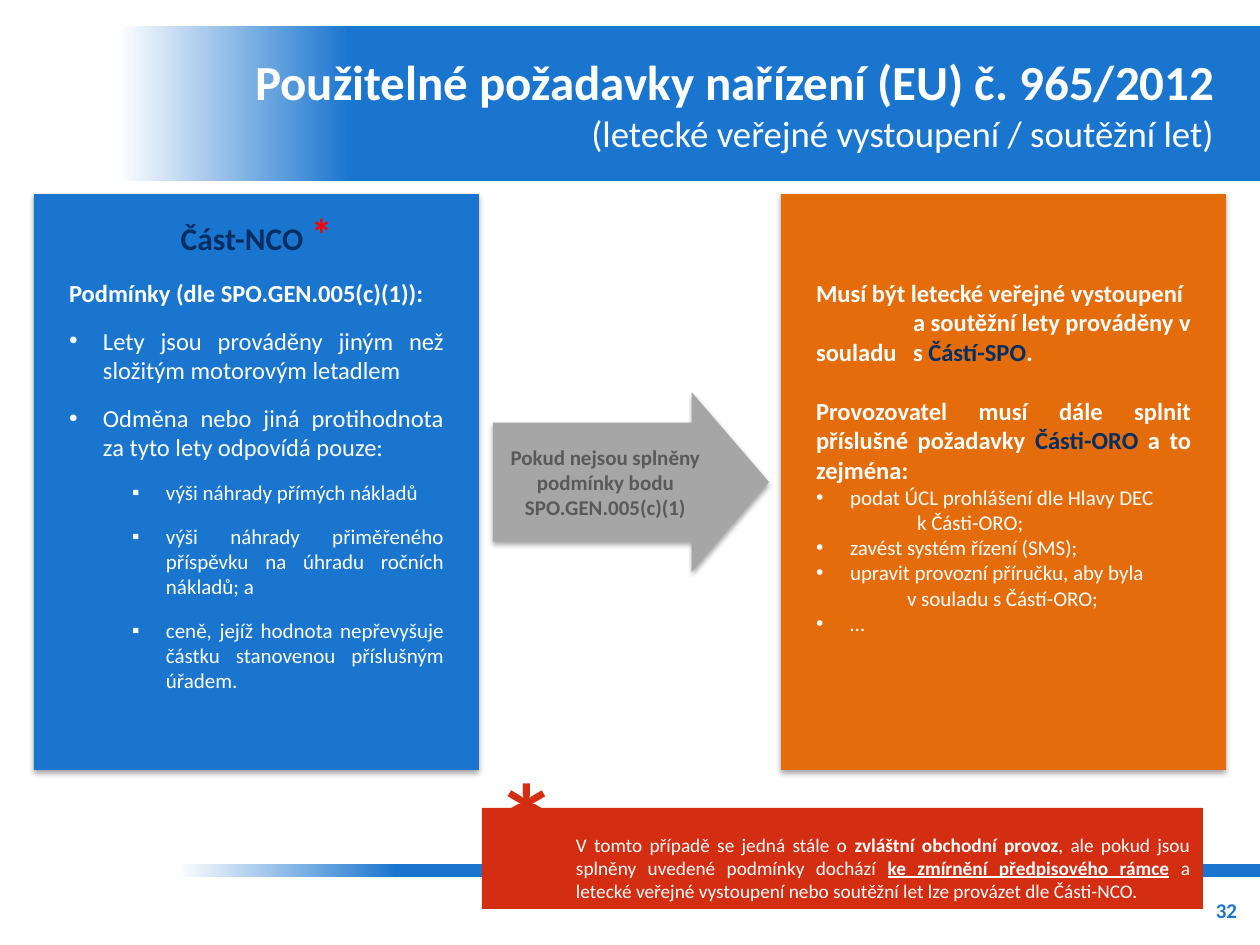
import pptx
import pptx.dml.color
import pptx.enum.shapes
import pptx.enum.text
import pptx.oxml
import pptx.oxml.ns
import pptx.util

RGBColor = pptx.dml.color.RGBColor
Align = pptx.enum.text.PP_ALIGN
Anchor = pptx.enum.text.MSO_ANCHOR
Shape = pptx.enum.shapes.MSO_SHAPE

WHITE = RGBColor(0xFF, 0xFF, 0xFF)
BLUE = RGBColor(0x1A, 0x75, 0xCF)
NAVY = RGBColor(0x00, 0x2E, 0x63)
ORANGE = RGBColor(0xE4, 0x6C, 0x0A)
GREY = RGBColor(0xA6, 0xA6, 0xA6)
DARK_GREY = RGBColor(0x59, 0x59, 0x59)
RED = RGBColor(0xD4, 0x2E, 0x12)
BRIGHT_RED = RGBColor(0xFF, 0x00, 0x00)
FONT = "Calibri"
EMU_PER_PX = 914400 / 126
HANG = 34  # hanging indent of every bullet

# A run is (text, size, colour, style); style holds b for bold, u for underline.
# A paragraph is (alignment, runs, options).
TITLE = [(Align.RIGHT, [
    ("Použitelné požadavky nařízení (EU) č. 965/2012\n", 28, WHITE, "b"),
    ("(letecké veřejné vystoupení / soutěžní let)", 21, WHITE, "")], {})]
NUMBER = [(Align.RIGHT, [("32", 12, BLUE, "b")], {})]
ARROW = [(Align.CENTER, [
    ("Pokud nejsou splněny podmínky bodu SPO.GEN.005(c)(1)", 12, DARK_GREY, "b")], {})]
ASTERISK = [(Align.LEFT, [("*", 70, RED, "b")], {})]
NOTE = [(Align.JUSTIFY, [
    ("V tomto případě se jedná stále o ", 11, WHITE, ""),
    ("zvláštní obchodní provoz", 11, WHITE, "b"),
    (", ale pokud jsou splněny uvedené podmínky dochází ", 11, WHITE, ""),
    ("ke zmírnění předpisového rámce", 11, WHITE, "bu"),
    (" a letecké veřejné vystoupení nebo soutěžní let lze provázet dle Části-NCO.",
     11, WHITE, "")], {})]

CONDITIONS = [
    "Lety jsou prováděny jiným než složitým motorovým letadlem",
    "Odměna nebo jiná protihodnota za tyto lety odpovídá pouze:",
]
PAYMENTS = [
    "výši náhrady přímých nákladů",
    "výši náhrady přiměřeného příspěvku na úhradu ročních nákladů; a",
    "ceně, jejíž hodnota nepřevyšuje částku stanovenou příslušným úřadem.",
]
DUTIES = [  # text and tab stops
    ("podat ÚCL prohlášení dle Hlavy DEC\n\tk Části-ORO;", [101]),
    ("zavést systém řízení (SMS);", []),
    ("upravit provozní příručku, aby byla\n\tv souladu s Částí-ORO;", [91]),
    ("…", []),
]

NCO = [
    (Align.CENTER, [("Část-NCO ", 18, NAVY, "b"), ("*", 25, BRIGHT_RED, "b")], {}),
    (Align.JUSTIFY, [("Podmínky (dle SPO.GEN.005(c)(1)):", 14, WHITE, "b")],
     {"before": 10.5}),
]
NCO += [(Align.JUSTIFY, [(text, 14, WHITE, "")],
         {"before": 10.5, "bullet": "•", "margin": HANG}) for text in CONDITIONS]
NCO += [(Align.JUSTIFY, [(text, 12, WHITE, "")],
         {"before": 10.5, "bullet": "▪", "margin": 97, "level": 1}) for text in PAYMENTS]

SPO = [
    (Align.LEFT, [
        ("Musí být letecké veřejné vystoupení\n\ta soutěžní lety prováděny v\n"
         "souladu\ts ", 14, WHITE, "b"),
        ("Částí-SPO", 14, NAVY, "b"), (".", 14, WHITE, "b")], {"tabs": [97, 175]}),
    (Align.JUSTIFY, [
        ("Provozovatel musí dále splnit příslušné požadavky ", 14, WHITE, "b"),
        ("Části-ORO", 14, NAVY, "b"), (" a to zejména:", 14, WHITE, "b")],
     {"before": 17}),
]
SPO += [(Align.LEFT, [(text, 12, WHITE, "")],
         {"bullet": "•", "margin": HANG, "tabs": tabs}) for text, tabs in DUTIES]

# shape, place, fill, text, insets, anchor, shadow
BLOCKS = [
    (Shape.RECTANGLE, (34, 194, 445, 576), BLUE, NCO, (35, 13, 35, 6), Anchor.TOP, True),
    (Shape.RECTANGLE, (781, 194, 445, 576), ORANGE, SPO, (35, 84, 35, 6), Anchor.TOP, True),
    (Shape.RIGHT_ARROW, (493, 392, 276, 180), GREY, ARROW, (13, 6, 13, 6),
     Anchor.MIDDLE, True),
    (Shape.RECTANGLE, (482, 808, 721, 101), RED, NOTE, (94, 25, 13, 6), Anchor.TOP, False),
]
BANDS = [(94, 26, 1166, 155), (154, 864, 1106, 13)]


def px(length):
    return pptx.util.Emu(round(length * EMU_PER_PX))


def add_xml(parent, markup):
    namespace = pptx.oxml.ns.nsdecls("a")
    head, rest = markup.split(" ", 1)
    parent.append(pptx.oxml.parse_xml(f"{head} {namespace} {rest}"))


def format_paragraph(para, alignment, options):
    properties = para._p.get_or_add_pPr()
    if "bullet" in options:
        properties.set("marL", str(px(options["margin"])))
        properties.set("indent", str(-px(HANG)))
        add_xml(properties, '<a:buFont typeface="Arial"/>')
        add_xml(properties, f'<a:buChar char="{options["bullet"]}"/>')
    if options.get("tabs"):
        stops = "".join(f'<a:tab pos="{px(stop)}" algn="l"/>' for stop in options["tabs"])
        add_xml(properties, f"<a:tabLst >{stops}</a:tabLst>")
    para.alignment = alignment
    para.level = options.get("level", 0)
    para.space_before = pptx.util.Pt(options.get("before", 0))


def write(shape, paragraphs, insets=(13, 6, 13, 6), anchor=Anchor.TOP, wrap=True):
    frame = shape.text_frame
    frame.word_wrap = wrap
    frame.auto_size = pptx.enum.text.MSO_AUTO_SIZE.NONE
    frame.vertical_anchor = anchor
    (frame.margin_left, frame.margin_top,
     frame.margin_right, frame.margin_bottom) = map(px, insets)
    for index, (alignment, runs, options) in enumerate(paragraphs):
        para = frame.add_paragraph() if index else frame.paragraphs[0]
        format_paragraph(para, alignment, options)
        for text, size, colour, style in runs:
            for line, part in enumerate(text.split("\n")):
                if line:
                    para.add_line_break()
                if not part:
                    continue
                span = para.add_run()
                span.text = part
                span.font.name = FONT
                span.font.size = pptx.util.Pt(size)
                span.font.color.rgb = colour
                span.font.bold = "b" in style
                span.font.underline = "u" in style


def add_block(page, kind, place):
    block = page.shapes.add_shape(kind, *map(px, place))
    block.shadow.inherit = False
    block.line.fill.background()
    return block


def add_shadow(block):
    effects = block._element.spPr.find(pptx.oxml.ns.qn("a:effectLst"))
    add_xml(effects, '<a:outerShdw blurRad="39400" dist="22900" dir="5400000" '
            'rotWithShape="0"><a:srgbClr val="000000"><a:alpha val="35000"/>'
            '</a:srgbClr></a:outerShdw>')


def main():
    deck = pptx.Presentation()
    deck.slide_width, deck.slide_height = px(1260), px(945)
    page = deck.slides.add_slide(deck.slide_layouts[5])

    title = page.shapes.title
    title.left, title.top, title.width, title.height = map(px, (94, 24, 1133, 158))
    write(title, TITLE, anchor=Anchor.MIDDLE)

    for place in BANDS:
        band = add_block(page, Shape.RECTANGLE, place)
        band.fill.gradient()
        band.fill.gradient_angle = 0
        for stop, position, colour in zip(band.fill.gradient_stops, (0.02, 0.22),
                                          (WHITE, BLUE)):
            stop.position = position
            stop.color.rgb = colour
        title.element.addprevious(band.element)

    number = page.shapes.add_textbox(*map(px, (956, 885, 294, 50)))
    write(number, NUMBER, anchor=Anchor.MIDDLE)

    for kind, place, fill, paragraphs, insets, anchor, shadowed in BLOCKS:
        block = add_block(page, kind, place)
        block.fill.solid()
        block.fill.fore_color.rgb = fill
        if kind == Shape.RIGHT_ARROW:
            block.adjustments[0], block.adjustments[1] = 0.66, 0.43
        if shadowed:
            add_shadow(block)
        write(block, paragraphs, insets, anchor)

    asterisk = page.shapes.add_textbox(*map(px, (484, 743, 87, 161)))
    write(asterisk, ASTERISK, wrap=False)
    deck.save("out.pptx")


if __name__ == "__main__":
    main()
